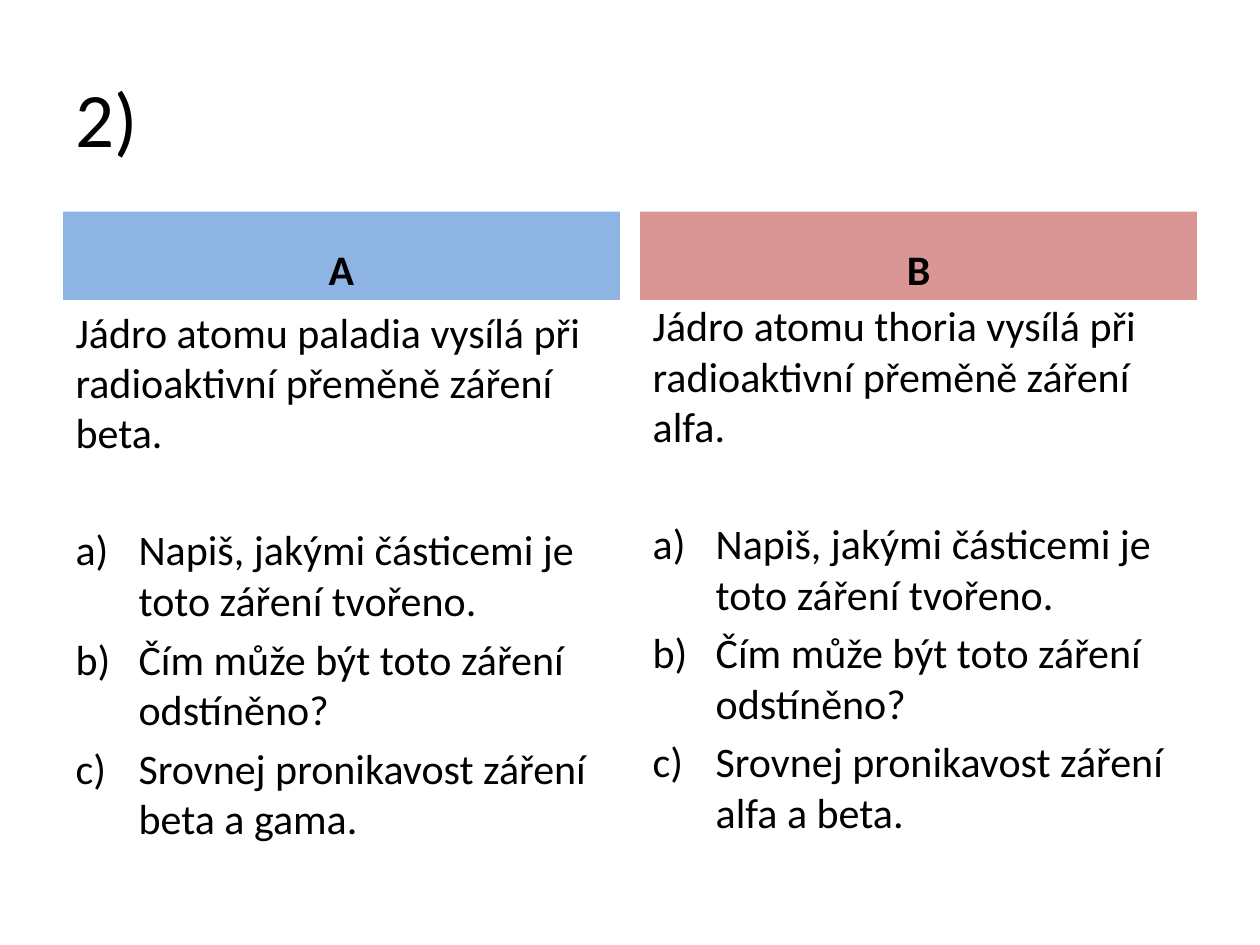
"""Build a slide that compares two radioactivity tasks, A and B."""
from lxml.etree import SubElement
from pptx import Presentation
from pptx.dml.color import RGBColor
from pptx.enum.text import MSO_ANCHOR as ANCHOR, MSO_AUTO_SIZE as AUTO, PP_ALIGN as ALIGN
from pptx.oxml.ns import qn
from pptx.util import Inches, Pt


def rgb(value):
    return RGBColor.from_string(value)


def add_text(p, text, size=24, bold=False, align=ALIGN.LEFT, before=None, numbered=False):
    p.alignment = align
    if before is not None:
        p.space_before = Pt(before)
    indent = Inches(0.5) if numbered else 0
    pPr = p._p.get_or_add_pPr()
    pPr.set("marL", str(indent))
    pPr.set("indent", str(-indent))
    if numbered:
        SubElement(pPr, qn("a:buFont"), typeface="+mj-lt")
        SubElement(pPr, qn("a:buAutoNum"), type="alphaLcParenR")
    else:
        SubElement(pPr, qn("a:buNone"))
    r = p.add_run()
    r.text = text
    r.font.name, r.font.size, r.font.bold = "Calibri", Pt(size), bold
    r.font.color.rgb = rgb("000000")


prs = Presentation()
prs.slide_width, prs.slide_height = Inches(10), Inches(7.5)
s = prs.slides.add_slide(prs.slide_layouts[4])
title, head_a, body_a, head_b, body_b = s.placeholders

columns = [
    (head_a, body_a, "A", "8EB4E3", 0.5, 2.38, "paladia", "beta", "beta a gama"),
    (head_b, body_b, "B", "D99694", 5.08, 2.33, "thoria", "alfa", "alfa a beta"),
]
boxes = [(title, 0.5, 0.3, 9, 1.25, ANCHOR.MIDDLE)]
for head, body, _, _, left, top, *_ in columns:
    boxes.append((head, left, 1.68, 4.42, 0.7, ANCHOR.BOTTOM))
    boxes.append((body, left, top, 4.42, 4.32, ANCHOR.TOP))
for sp, left, top, width, height, anchor in boxes:
    sp.left, sp.top = Inches(left), Inches(top)
    sp.width, sp.height = Inches(width), Inches(height)
    tf = sp.text_frame
    tf.auto_size, tf.word_wrap, tf.vertical_anchor = AUTO.NONE, True, anchor

add_text(title.text_frame.paragraphs[0], "2)", size=44)

for head, body, letter, fill, _, _, element, ray, pair in columns:
    head.fill.solid()
    head.fill.fore_color.rgb = rgb(fill)
    add_text(head.text_frame.paragraphs[0], letter, bold=True, align=ALIGN.CENTER)
    tf = body.text_frame
    add_text(tf.paragraphs[0],
             f"Jádro atomu {element} vysílá při radioaktivní přeměně záření {ray}.")
    questions = [
        ("Napiš, jakými částicemi je toto záření tvořeno.", 38),
        ("Čím může být toto záření odstíněno?", None),
        (f"Srovnej pronikavost záření {pair}.", None),
    ]
    for question, before in questions:
        add_text(tf.add_paragraph(), question, before=before, numbered=True)

prs.save("out.pptx")
